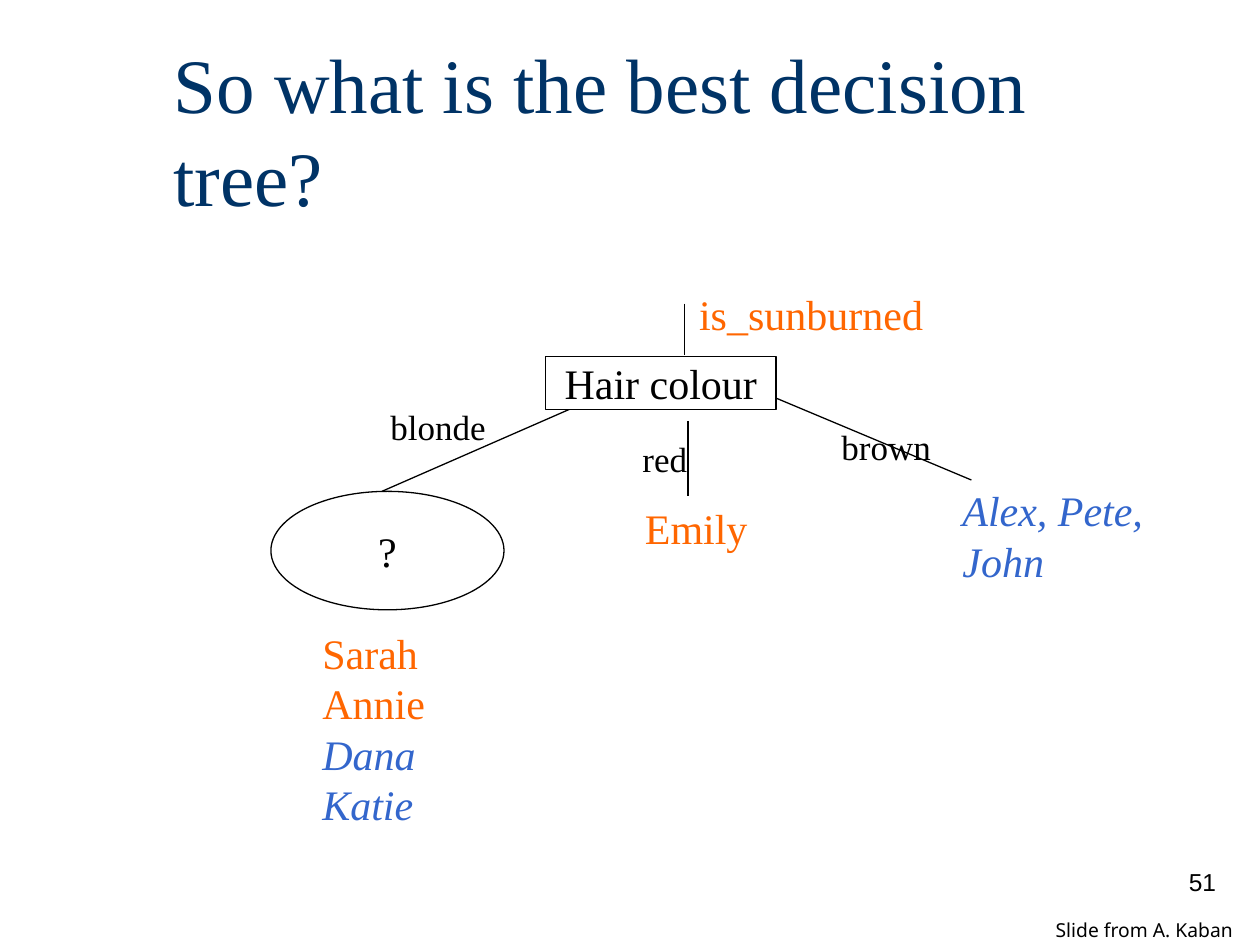
from typing import NamedTuple

from lxml import etree
from pptx import Presentation
from pptx.dml.color import RGBColor
from pptx.enum import shapes as kind, text as fmt
from pptx.oxml.ns import qn
from pptx.util import Inches, Pt

HEX = {"black": "000000", "white": "FFFFFF", "navy": "003366",
       "orange": "FF6600", "blue": "3366CC"}
SERIF = "Times New Roman"
MID = fmt.MSO_ANCHOR.MIDDLE
CENTER, RIGHT = fmt.PP_ALIGN.CENTER, fmt.PP_ALIGN.RIGHT
GROW = fmt.MSO_AUTO_SIZE.SHAPE_TO_FIT_TEXT


class Box(NamedTuple):
    left: float
    top: float
    width: float
    height: float


class Run(NamedTuple):
    text: str
    color: str = "black"
    italic: bool = False


class Label(NamedTuple):
    box: Box
    runs: list[Run]
    size: int = 24


class Edge(NamedTuple):
    start: tuple[float, float]
    end: tuple[float, float]


LABELS = [
    Label(Box(5.45, 2.24, 3.17, 0.5), [Run("is_sunburned", "orange")]),
    Label(Box(7.54, 3.8, 1.83, 0.9), [Run("Alex, Pete, John", "blue", True)]),
    Label(Box(5.02, 3.94, 1.1, 0.5), [Run("Emily", "orange")]),
    Label(Box(2.46, 4.93, 1.15, 1.7),
          [Run("Sarah Annie ", "orange"), Run("Dana Katie", "blue", True)]),
    Label(Box(6.58, 3.33, 1, 0.43), [Run("brown")], 20),
    Label(Box(3, 3.17, 1, 0.43), [Run("blonde")], 20),
    Label(Box(5, 3.42, 1, 0.43), [Run("red")], 20),
]
EDGES = [
    Edge((5.43, 2.41), (5.43, 2.82)),
    Edge((4.7, 3.17), (3.03, 3.9)),
    Edge((5.46, 3.34), (5.46, 3.94)),
    Edge((6.16, 3.16), (7.71, 3.81)),
]


def tint(name: str) -> RGBColor:
    return RGBColor.from_string(HEX[name])


def place(box: Box) -> list[int]:
    return [Inches(side) for side in box]


def write(shape, runs: list[Run], *, size=24, font=SERIF, align=None,
          anchor=None, wrap=True, fit=None) -> None:
    """Fill a shape with one paragraph of formatted runs."""
    frame = shape.text_frame
    frame.word_wrap = wrap
    if fit is not None:
        frame.auto_size = fit
    if anchor is not None:
        frame.vertical_anchor = anchor
    para = frame.paragraphs[0]
    para.alignment = align
    for item in runs:
        run = para.add_run()
        run.text = item.text
        run.font.name = font
        run.font.size = Pt(size)
        run.font.italic = item.italic
        run.font.color.rgb = tint(item.color)


def add_text(slide, box: Box, runs: list[Run], **style) -> None:
    write(slide.shapes.add_textbox(*place(box)), runs, **style)


def add_node(slide, form, box: Box, word: str, fill: str | None = None) -> None:
    node = slide.shapes.add_shape(form, *place(box))
    node.shadow.inherit = False
    if fill:
        node.fill.solid()
        node.fill.fore_color.rgb = tint(fill)
    else:
        node.fill.background()
    node.line.color.rgb = tint("black")
    node.line.width = Pt(0.75)
    write(node, [Run(word)], align=CENTER, anchor=MID, wrap=False)


def add_edge(slide, edge: Edge) -> None:
    ends = [Inches(pos) for pos in edge.start + edge.end]
    line = slide.shapes.add_connector(kind.MSO_CONNECTOR.STRAIGHT, *ends)
    line.line.color.rgb = tint("black")
    line.line.width = Pt(0.75)
    etree.SubElement(line._element.spPr, qn("a:effectLst"))


def main() -> None:
    deck = Presentation()
    deck.slide_width, deck.slide_height = Inches(10), Inches(7.5)
    slide = deck.slides.add_slide(deck.slide_layouts[6])

    add_text(slide, Box(1.28, 0.35, 7.95, 1.35),
             [Run("So what is the best decision tree?", "navy")],
             size=44, anchor=MID)
    for edge in EDGES:
        add_edge(slide, edge)
    add_node(slide, kind.MSO_SHAPE.OVAL, Box(2.15, 3.9, 1.85, 0.94), "?")
    add_node(slide, kind.MSO_SHAPE.RECTANGLE, Box(4.33, 2.83, 1.83, 0.42),
             "Hair colour", "white")
    for label in LABELS:
        add_text(slide, label.box, label.runs, size=label.size, fit=GROW)

    add_text(slide, Box(7.67, 6.83, 2.08, 0.5), [Run("51")],
             size=14, font="Arial", align=RIGHT)
    add_text(slide, Box(8.28, 7.24, 1.68, 0.29), [Run("Slide from A. Kaban")],
             size=11, font="Noto Sans", wrap=False, fit=GROW)
    deck.save("out.pptx")


if __name__ == "__main__":
    main()
